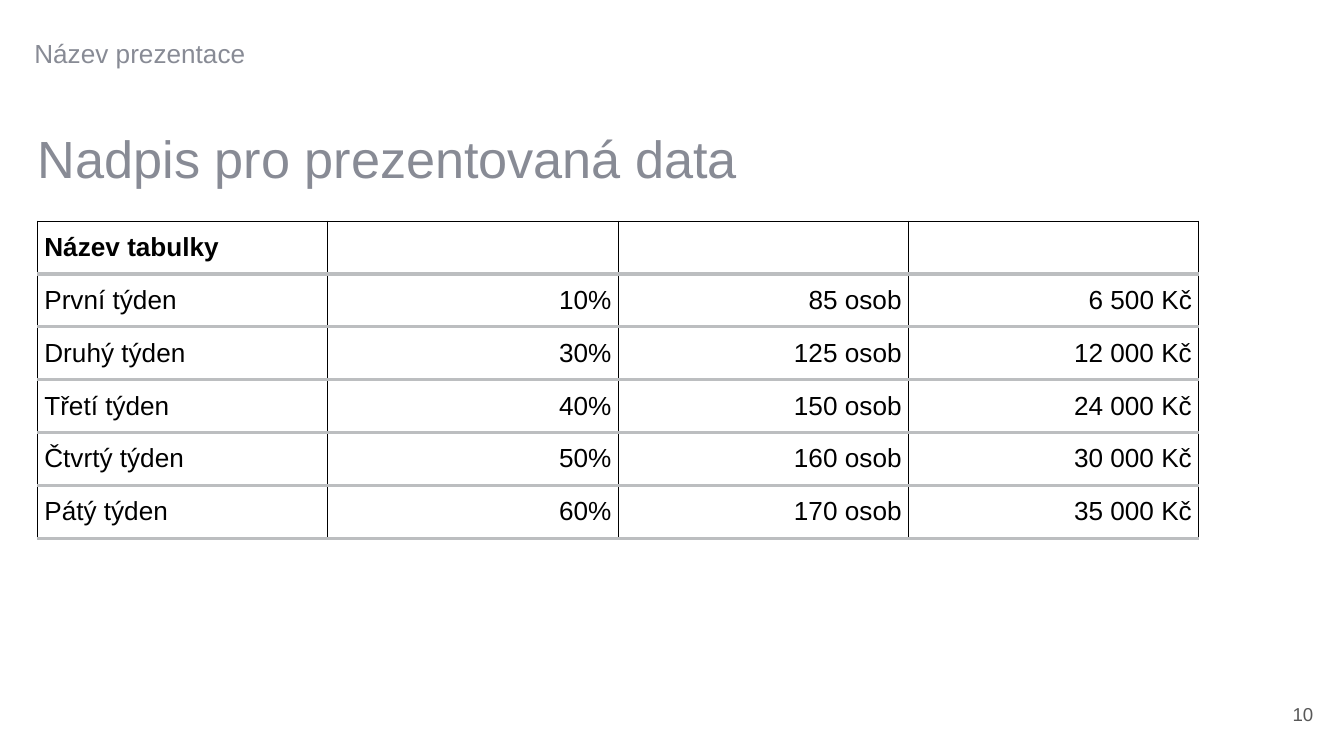
from pptx import Presentation
from pptx.dml.color import RGBColor
from pptx.enum.text import MSO_ANCHOR, MSO_AUTO_SIZE, PP_ALIGN
from pptx.util import Pt
from lxml.etree import SubElement
from pptx.oxml.ns import qn

BLACK = RGBColor(0x00, 0x00, 0x00)
WHITE = RGBColor(0xFF, 0xFF, 0xFF)
GREY = RGBColor(0x88, 0x8B, 0x95)
DARK = RGBColor(0x58, 0x58, 0x58)
RULE = RGBColor(0xBC, 0xBE, 0xC0)


def write(frame, text, size, color, align=PP_ALIGN.LEFT, bold=False):
    para = frame.paragraphs[0]
    para.text = text
    para.alignment = align
    para.space_before = Pt(0)
    para.font.name = "Arial"
    para.font.size = Pt(size)
    para.font.bold = bold
    para.font.color.rgb = color


def border(cell, side, color, width):
    line = SubElement(cell._tc.get_or_add_tcPr(), qn(f"a:ln{side}"), w=str(Pt(width)))
    fill = SubElement(line, qn("a:solidFill"))
    SubElement(fill, qn("a:srgbClr"), val=str(color))


deck = Presentation()
deck.slide_width, deck.slide_height = Pt(720), Pt(405)
slide = deck.slides.add_slide(deck.slide_layouts[1])

title = slide.shapes.title
body = slide.placeholders[1]
number = slide.shapes.add_textbox(Pt(684), Pt(370), Pt(26.64), Pt(25.2))
boxes = [
    (title, 20.16, 60.5, 595.44, 45.4, 7.2),
    (body, 9.36, 20.16, 595.44, 28.1, 0),
]
for box, left, top, width, height, inset in boxes:
    box.left, box.top = Pt(left), Pt(top)
    box.width, box.height = Pt(width), Pt(height)
    frame = box.text_frame
    frame.margin_left, frame.margin_top = Pt(0), Pt(inset)
    frame.margin_right = frame.margin_bottom = Pt(7.2)
    frame.vertical_anchor = MSO_ANCHOR.TOP
    frame.auto_size = MSO_AUTO_SIZE.NONE

props = body.text_frame.paragraphs[0]._p.get_or_add_pPr()
props.set("marL", str(Pt(27)))
props.set("indent", str(Pt(-18)))
SubElement(props, qn("a:buNone"))

write(title.text_frame, "Nadpis pro prezentovaná data", 28, GREY)
write(body.text_frame, "Název prezentace", 14, GREY)

frame = number.text_frame
frame.margin_left = frame.margin_right = Pt(7.2)
frame.margin_top = frame.margin_bottom = Pt(7.2)
frame.vertical_anchor = MSO_ANCHOR.MIDDLE
frame.word_wrap = False
frame.auto_size = MSO_AUTO_SIZE.SHAPE_TO_FIT_TEXT
write(frame, "10", 10, DARK, PP_ALIGN.RIGHT)

data = [
    ("Název tabulky", "", "", ""),
    ("První týden", "10%", "85 osob", "6 500 Kč"),
    ("Druhý týden", "30%", "125 osob", "12 000 Kč"),
    ("Třetí týden", "40%", "150 osob", "24 000 Kč"),
    ("Čtvrtý týden", "50%", "160 osob", "30 000 Kč"),
    ("Pátý týden", "60%", "170 osob", "35 000 Kč"),
]
table = slide.shapes.add_table(
    len(data), 4, Pt(20.16), Pt(118.4), Pt(622.08), Pt(169.92)
).table
table.first_row = table.horz_banding = False

for r, row in enumerate(data):
    for c, text in enumerate(row):
        cell = table.cell(r, c)
        cell.margin_left = cell.margin_right = Pt(3.6)
        cell.margin_top = cell.margin_bottom = Pt(3.6)
        cell.vertical_anchor = MSO_ANCHOR.MIDDLE
        border(cell, "L", BLACK, 0.5)
        border(cell, "R", BLACK, 0.5)
        border(cell, "T", RULE if r else BLACK, 2 if r else 0.5)
        border(cell, "B", RULE, 2)
        cell.fill.solid()
        cell.fill.fore_color.rgb = WHITE
        align = PP_ALIGN.RIGHT if c else PP_ALIGN.LEFT
        write(cell.text_frame, text, 14, BLACK, align, bold=r == 0)

deck.save("out.pptx")
